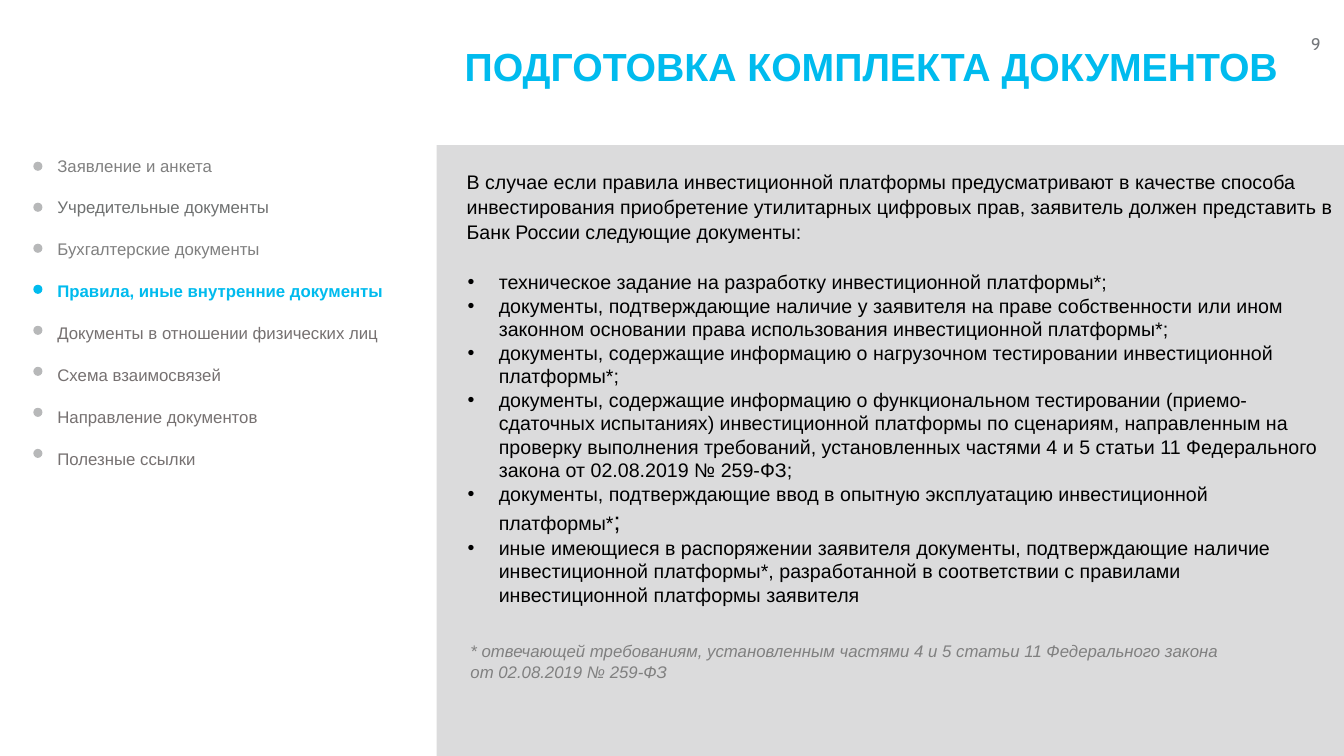
from collections import namedtuple
from dataclasses import dataclass

from lxml.etree import SubElement
from pptx import Presentation
from pptx.dml.color import RGBColor as Rgb
from pptx.enum.shapes import MSO_SHAPE as Preset
from pptx.enum.text import MSO_ANCHOR as Anchor, MSO_AUTO_SIZE as AutoSize, PP_ALIGN as Align
from pptx.oxml.ns import qn
from pptx.util import Pt

Box = namedtuple("Box", "left top width height")


@dataclass(frozen=True)
class Theme:
    font: str = "Arial"
    number_font: str = "Cabin"
    accent: str = "00BBEE"
    panel: str = "DBDBDC"
    dot: str = "B7B8B9"
    ink: str = "000000"
    muted: str = "808080"
    muted_dark: str = "6F7171"
    muted_warm: str = "767171"
    number: str = "74777B"
    title_size: int = 28
    large_size: int = 18
    body_size: int = 14
    small_size: int = 12


THEME = Theme()
SLIDE = Box(0, 0, 960, 540)

TITLE = "ПОДГОТОВКА КОМПЛЕКТА ДОКУМЕНТОВ"
SECTIONS = [
    ("Заявление и анкета", THEME.muted),
    ("Учредительные документы", THEME.muted_dark),
    ("Бухгалтерские документы", THEME.muted),
    ("Правила, иные внутренние документы", THEME.accent),
    ("Документы в отношении физических лиц", THEME.muted_warm),
    ("Схема взаимосвязей", THEME.muted_warm),
    ("Направление документов", THEME.muted_warm),
    ("Полезные ссылки", THEME.muted_warm),
]
INTRO = (
    "В случае если правила инвестиционной платформы предусматривают в качестве способа "
    "инвестирования приобретение утилитарных цифровых прав, заявитель должен представить "
    "в Банк России следующие документы:"
)
REQUIREMENTS = [
    [("техническое задание на разработку инвестиционной платформы*;", {})],
    [("документы, подтверждающие наличие у заявителя на праве собственности или ином "
      "законном основании права использования инвестиционной платформы*;", {})],
    [("документы, содержащие информацию о нагрузочном тестировании инвестиционной "
      "платформы*;", {})],
    [("документы, содержащие информацию о функциональном тестировании "
      "(приемо-сдаточных испытаниях) инвестиционной платформы по сценариям, "
      "направленным на проверку выполнения требований, установленных частями 4 и 5 "
      "статьи 11 Федерального закона от 02.08.2019 № 259-ФЗ;", {})],
    [("документы, подтверждающие ввод в опытную эксплуатацию инвестиционной платформы*", {}),
     (";", {"size": THEME.large_size})],
    [("иные имеющиеся в распоряжении заявителя документы, подтверждающие наличие "
      "инвестиционной платформы*, разработанной в соответствии с правилами "
      "инвестиционной платформы заявителя", {})],
]
FOOTNOTE = (
    "* отвечающей требованиям, установленным частями 4 и 5 статьи 11 Федерального закона\n"
    "от 02.08.2019 № 259-ФЗ"
)


def place(shape, box):
    shape.left, shape.top, shape.width, shape.height = map(Pt, box)


def write_run(paragraph, text, font=THEME.font, size=THEME.body_size, color=THEME.ink,
              bold=False, italic=False):
    for number, line in enumerate(text.split("\n")):
        if number:
            paragraph.add_line_break()
        run = paragraph.add_run()
        run.text = line
        run.font.name, run.font.size = font, Pt(size)
        run.font.bold, run.font.italic = bold, italic
        run.font.color.rgb = Rgb.from_string(color)


def set_indent(paragraph, bullet):
    properties = paragraph._p.get_or_add_pPr()
    properties.set("marL", str(Pt(28.8) if bullet else 0))
    properties.set("indent", str(Pt(-22.3) if bullet else 0))
    if not bullet:
        SubElement(properties, qn("a:buNone"))
        return
    SubElement(properties, qn("a:buFont"), typeface=THEME.font)
    SubElement(properties, qn("a:buChar"), char=bullet)
    tabs = SubElement(properties, qn("a:tabLst"))
    for stop in (42.5, 49.7):
        SubElement(tabs, qn("a:tab"), pos=str(Pt(stop)), algn="l")


def write_text(shape, box, paragraphs, align=Align.LEFT, anchor=Anchor.TOP, bullet=None,
               line_spacing=1.0, space_after=0, **style):
    place(shape, box)
    frame = shape.text_frame
    frame.word_wrap, frame.auto_size = True, AutoSize.NONE
    frame.vertical_anchor = anchor
    for number, runs in enumerate(paragraphs):
        paragraph = frame.add_paragraph() if number else frame.paragraphs[0]
        set_indent(paragraph, bullet)
        paragraph.alignment, paragraph.line_spacing = align, line_spacing
        paragraph.space_before, paragraph.space_after = Pt(0), Pt(space_after)
        for text, extra in runs:
            write_run(paragraph, text, **{**style, **extra})


def add_text(slide, box, text, **style):
    write_text(slide.shapes.add_textbox(0, 0, 0, 0), box, [[(text, {})]], **style)


def add_plain_shape(slide, preset, box, color):
    shape = slide.shapes.add_shape(preset, *map(Pt, box))
    shape.shadow.inherit = False
    shape.fill.solid()
    shape.fill.fore_color.rgb = Rgb.from_string(color)
    shape.line.fill.background()
    return shape


def build_header(slide, box):
    title_box = Box(box.left, box.top + 13, box.width, 72.7)
    write_text(slide.shapes.title, title_box, [[(TITLE, {})]], anchor=Anchor.MIDDLE,
               line_spacing=0.9, size=THEME.title_size, color=THEME.accent, bold=True)
    number_box = Box(box.left + box.width - 184, box.top + 20.2, 174.4, 21.6)
    add_text(slide, number_box, "9", align=Align.RIGHT, font=THEME.number_font,
             size=THEME.small_size, color=THEME.number)


def build_sections(slide, box, sections_holder):
    entries = [[(name, {"color": color, "bold": color == THEME.accent})]
               for name, color in SECTIONS]
    list_box = Box(box.left + 10, box.top, box.width - 10, box.height)
    write_text(sections_holder, list_box, entries, space_after=15.5, size=THEME.small_size)
    pitch, dot_size = 29.3, 6.5
    for number, (_, color) in enumerate(SECTIONS):
        dot_box = Box(box.left, box.top + 8.2 + number * pitch, dot_size, dot_size)
        fill = color if color == THEME.accent else THEME.dot
        add_plain_shape(slide, Preset.OVAL, dot_box, fill)


def build_requirements(slide, box, requirements_holder):
    panel = add_plain_shape(slide, Preset.RECTANGLE, box, THEME.panel)
    panel._element.getparent().insert(2, panel._element)
    right = box.left + box.width
    intro_left, list_left, note_left = (box.left + inset for inset in (14.4, 8.5, 17.2))
    add_text(slide, Box(intro_left, box.top + 12.9, right - intro_left, 61.9), INTRO,
             line_spacing=1.07)
    write_text(requirements_holder, Box(list_left, box.top + 85.6, right - list_left, 249.8),
               REQUIREMENTS, bullet="•")
    add_text(slide, Box(note_left, box.top + 349.2, right - note_left, 38.2), FOOTNOTE,
             line_spacing=1.07, size=THEME.small_size, color=THEME.muted, italic=True)


def main():
    deck = Presentation()
    deck.slide_width, deck.slide_height = Pt(SLIDE.width), Pt(SLIDE.height)
    slide = deck.slides.add_slide(deck.slide_layouts[3])
    sections_holder, requirements_holder = slide.placeholders[1], slide.placeholders[2]
    build_header(slide, Box(324.7, 0, SLIDE.width - 324.7, 103.7))
    build_sections(slide, Box(23.8, 107.3, 275.7, 229.7), sections_holder)
    build_requirements(slide, Box(311.8, 103.7, SLIDE.width - 311.8, SLIDE.height - 103.7),
                       requirements_holder)
    deck.save("out.pptx")


if __name__ == "__main__":
    main()
